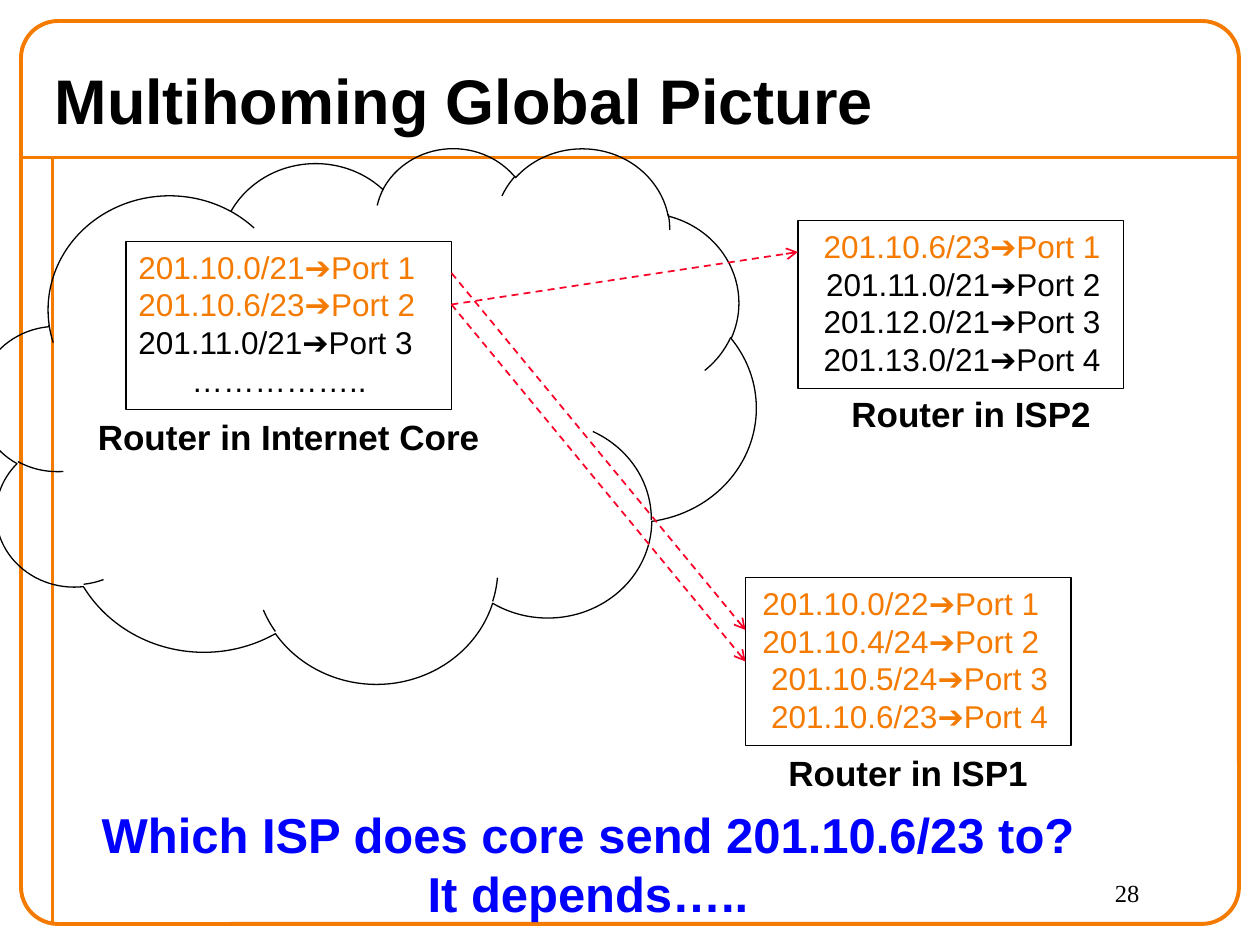
import pptx
import pptx.util
import pptx.dml.color
import pptx.enum.dml
import pptx.enum.shapes
import pptx.enum.text
import pptx.oxml

Pt = pptx.util.Pt
RGBColor = pptx.dml.color.RGBColor
SHAPE = pptx.enum.shapes.MSO_SHAPE
ALIGN = pptx.enum.text.PP_ALIGN
ANCHOR = pptx.enum.text.MSO_ANCHOR

ORANGE = RGBColor(0xF4, 0x7A, 0x00)
BLACK = RGBColor(0, 0, 0)
RED = RGBColor(0xFC, 0x01, 0x28)
BLUE = RGBColor(0, 0, 0xFF)

LEFT, CENTER, RIGHT = ALIGN.LEFT, ALIGN.CENTER, ALIGN.RIGHT
BOX_W, BOX_H = 186, 96
DRAWING_NS = "http://schemas.openxmlformats.org/drawingml/2006/main"


def write_lines(tf, lines, size, bold=False, font="Arial"):
    """Fill a text frame with (text, colour, alignment) paragraphs."""
    tf.word_wrap = True
    for i, (text, color, align) in enumerate(lines):
        p = tf.paragraphs[0] if i == 0 else tf.add_paragraph()
        p.text = text
        p.alignment = align
        p.font.name = font
        p.font.size = Pt(size)
        p.font.bold = bold
        p.font.color.rgb = color


def add_text(shapes, box, lines, size, bold=False, font="Arial"):
    """Add a text box at (left, top, width, height)."""
    sp = shapes.add_textbox(*map(Pt, box))
    write_lines(sp.text_frame, lines, size, bold, font)


def add_outline(shapes, kind, box, color, width):
    """Add an unfilled preset shape."""
    sp = shapes.add_shape(kind, *map(Pt, box))
    sp.shadow.inherit = False
    sp.fill.background()
    sp.line.color.rgb = color
    sp.line.width = Pt(width)
    return sp


def add_line(shapes, start, end, color, width):
    """Add a straight connector without a shadow."""
    line = shapes.add_connector(
        pptx.enum.shapes.MSO_CONNECTOR.STRAIGHT, *map(Pt, start + end))
    line.line.color.rgb = color
    line.line.width = Pt(width)
    line._element.spPr.append(
        pptx.oxml.parse_xml(f'<a:effectLst xmlns:a="{DRAWING_NS}"/>'))
    return line


def add_route(shapes, start, end):
    """Add a dashed red arrow between two routers."""
    line = add_line(shapes, start, end, RED, 1)
    line.line.dash_style = pptx.enum.dml.MSO_LINE.DASH
    line.line._get_or_add_ln().append(
        pptx.oxml.parse_xml(f'<a:tailEnd xmlns:a="{DRAWING_NS}" type="arrow"/>'))


def add_frame(shapes, box):
    """Draw the rounded page frame with its title rule and margin rule."""
    left, top, width, height = box
    rule_y, margin_x = top + 78, left + 18
    add_line(shapes, (left, rule_y), (left + width, rule_y), ORANGE, 2.25)
    add_line(shapes, (margin_x, rule_y), (margin_x, top + height), ORANGE, 2.25)
    add_outline(shapes, SHAPE.ROUNDED_RECTANGLE, box, ORANGE, 2.25).adjustments[0] = 0.041


def add_title(slide, box, text):
    """Move, fill and format the title placeholder."""
    sp = slide.shapes.title
    sp.left, sp.top, sp.width, sp.height = map(Pt, box)
    sp.text_frame.vertical_anchor = ANCHOR.MIDDLE
    write_lines(sp.text_frame, [(text, BLACK, LEFT)], 36, True)


def add_router(shapes, left, top, name, entries, label_dx=-30, label_dy=96):
    """Draw a forwarding table and the router name below it."""
    group = shapes.add_group_shape()
    add_outline(group.shapes, SHAPE.RECTANGLE, (left, top, BOX_W, BOX_H), BLACK, 0.75)
    add_text(group.shapes, (left, top, 180, BOX_H), entries, 18)
    add_text(shapes, (left + label_dx, top + label_dy, 246, 32),
             [(name, BLACK, CENTER)], 20, True)


def main():
    """Build the slide and save it."""
    prs = pptx.Presentation()
    prs.slide_width, prs.slide_height = Pt(720), Pt(540)
    s = prs.slides.add_slide(prs.slide_layouts[5])
    shapes = s.shapes

    add_frame(shapes, (12, 12, 696, 528 - 12))
    add_title(s, (24, 30, 684, 54), "Multihoming Global Picture")
    add_text(shapes, (630, 498, 72, 30), [("28", BLACK, LEFT)], 14, font="Times New Roman")
    add_outline(shapes, SHAPE.CLOUD, (-12, 84, 444, 306), BLACK, 0.75)

    core, isp1, isp2 = (72, 138), (426, 330), (456, 126)
    add_router(shapes, *core, "Router in Internet Core", [
        ("201.10.0/21➔Port 1", ORANGE, LEFT),
        ("201.10.6/23➔Port 2", ORANGE, LEFT),
        ("201.11.0/21➔Port 3", BLACK, LEFT),
        ("…………….. ", BLACK, CENTER)])
    add_router(shapes, *isp1, "Router in ISP1", [
        ("201.10.0/22➔Port 1 ", ORANGE, RIGHT),
        ("201.10.4/24➔Port 2 ", ORANGE, RIGHT),
        ("201.10.5/24➔Port 3", ORANGE, RIGHT),
        ("201.10.6/23➔Port 4", ORANGE, RIGHT)])
    add_router(shapes, *isp2, "Router in ISP2", [
        ("201.10.6/23➔Port 1", ORANGE, RIGHT),
        ("201.11.0/21➔Port 2", BLACK, RIGHT),
        ("201.12.0/21➔Port 3", BLACK, RIGHT),
        ("201.13.0/21➔Port 4", BLACK, RIGHT)], label_dx=-24, label_dy=94.5)

    core_right = core[0] + BOX_W
    first_row, second_row = core[1] + 18, core[1] + 36
    add_route(shapes, (core_right, second_row), (isp1[0], isp1[1] + 48))
    add_route(shapes, (core_right, second_row), (isp2[0], isp2[1] + 18))
    add_text(shapes, (24, 456, 624, 75), [
        ("Which ISP does core send 201.10.6/23 to?", BLUE, CENTER),
        ("It depends…..", BLUE, CENTER)], 28, True)
    add_route(shapes, (core_right, first_row), (isp1[0], isp1[1] + 30))

    prs.save("out.pptx")


if __name__ == "__main__":
    main()
